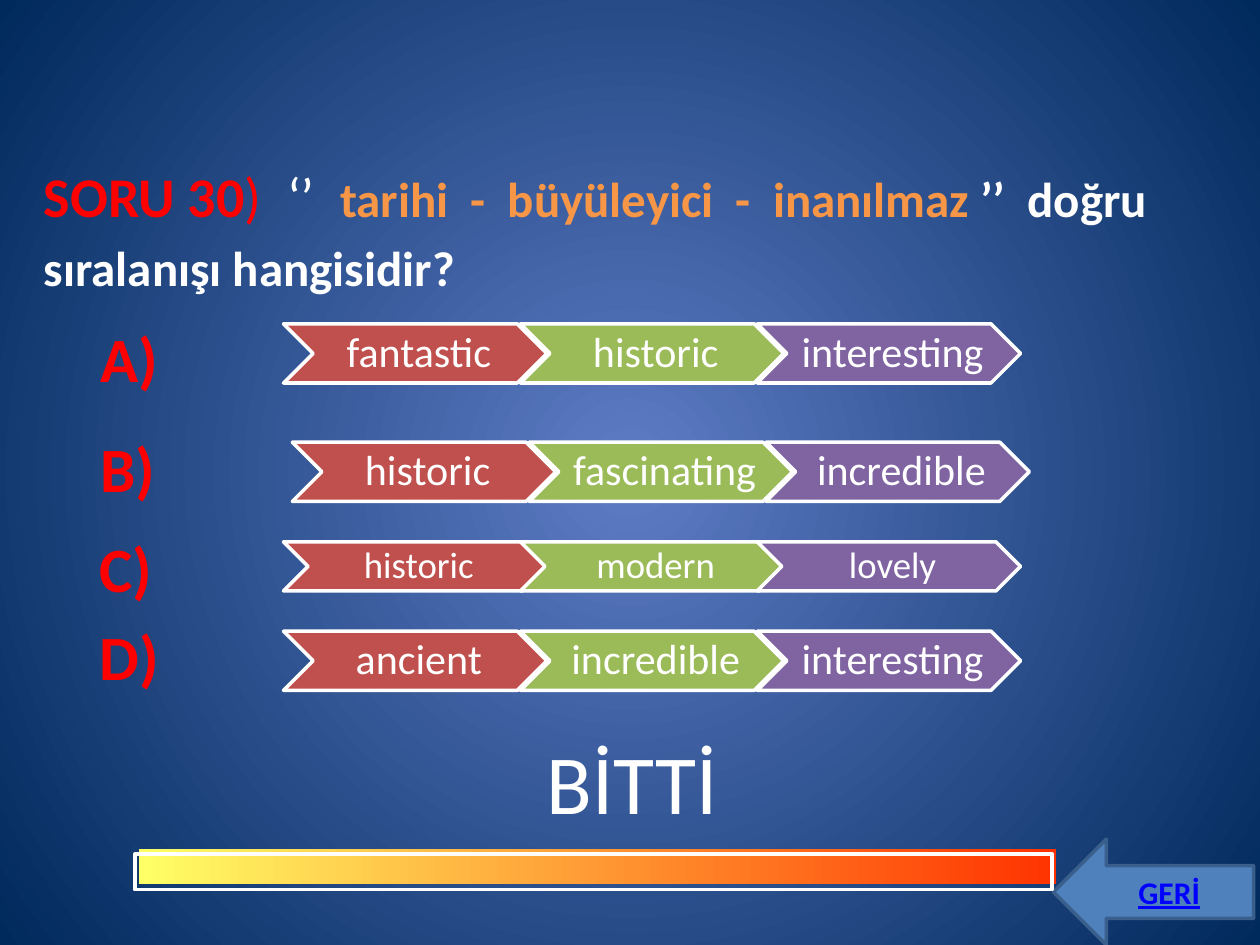
"""Build a quiz slide with four answer rows of chevrons."""
from lxml.etree import SubElement
from pptx import Presentation
from pptx.dml.color import RGBColor
from pptx.enum.shapes import MSO_SHAPE as SHAPE
from pptx.enum.text import MSO_ANCHOR as ANCHOR, PP_ALIGN as ALIGN
from pptx.oxml.ns import qn
from pptx.util import Inches, Pt

COLS, ROWS = 100, 75
UNIT = Inches(0.1)
FONT = "Calibri"
WHITE = RGBColor(0xFF, 0xFF, 0xFF)
RED = RGBColor(0xFF, 0x00, 0x00)
ORANGE = RGBColor(0xF7, 0x96, 0x46)
LINK_BLUE = RGBColor(0x00, 0x00, 0xFF)
ARROW_FILL = RGBColor(0x4F, 0x81, 0xBD)
ARROW_LINE = RGBColor(0x3A, 0x5F, 0x8C)
BG_CENTRE = RGBColor(0x5E, 0x7C, 0xC5)
BG_EDGE = RGBColor(0x00, 0x29, 0x5C)
BAR_START = RGBColor(0xFF, 0xFF, 0x66)
BAR_END = RGBColor(0xFF, 0x33, 0x00)
STEP_FILLS = (
    RGBColor(0xC0, 0x50, 0x4D),
    RGBColor(0x9B, 0xBB, 0x59),
    RGBColor(0x80, 0x64, 0xA2),
)
STEP_WIDTH, STEP_PITCH = 20.9, 18.8

ANSWERS = (
    ("A)", 7, 24.9, 22.5, 25.7, 4.7, 24, ("fantastic", "historic", "interesting")),
    ("B)", 7, 33.6, 23.2, 35.1, 4.7, 24, ("historic", "fascinating", "incredible")),
    ("C)", 6.9, 41.5, 22.5, 43, 3.9, 21, ("historic", "modern", "lovely")),
    ("D)", 6.9, 48.5, 22.5, 50.1, 4.7, 24, ("ancient", "incredible", "interesting")),
)


def grid(*cells):
    return [int(n * UNIT) for n in cells]


def add_run(p, text, size=24, color=WHITE, bold=False, underline=False):
    r = p.add_run()
    r.text = text
    r.font.name = FONT
    r.font.size = Pt(size)
    r.font.color.rgb = color
    r.font.bold = bold
    r.font.underline = underline


def add_text(shapes, box, text, align=ALIGN.LEFT, wrap=True, **fmt):
    tf = shapes.add_textbox(*grid(*box)).text_frame
    tf.word_wrap = wrap
    p = tf.paragraphs[0]
    p.alignment = align
    add_run(p, text, **fmt)


def set_gradient(fill, start, end):
    fill.gradient()
    for stop, color in zip(fill.gradient_stops, (start, end)):
        stop.color.rgb = color


def add_shape(shapes, kind, box, fill=None, line=None, width=2):
    sp = shapes.add_shape(kind, *grid(*box))
    sp.shadow.inherit = False
    if fill is None:
        sp.fill.background()
    else:
        sp.fill.solid()
        sp.fill.fore_color.rgb = fill
    if line is None:
        sp.line.fill.background()
    else:
        sp.line.color.rgb = line
        sp.line.width = Pt(width)
    return sp


def set_background(s):
    set_gradient(s.background.fill, BG_CENTRE, BG_EDGE)
    grad = s.element.find(".//" + qn("a:gradFill"))
    grad.remove(grad.find(qn("a:lin")))
    circle = SubElement(grad, qn("a:path"), {"path": "circle"})
    SubElement(circle, qn("a:fillToRect"), dict.fromkeys("ltrb", "50000"))


def add_question(s):
    tf = s.shapes.add_textbox(*grid(2.5, 11.5, 95.7, 12.6)).text_frame
    tf.word_wrap = True
    tf.vertical_anchor = ANCHOR.MIDDLE
    p = tf.paragraphs[0]
    p.line_spacing = 1.15
    p.space_before, p.space_after = Pt(6), Pt(10)
    add_run(p, "SORU 30", size=32, color=RED, bold=True)
    add_run(p, ")  ", size=32, color=RED)
    add_run(p, "‘’  ", size=32)
    add_run(p, "tarihi  -  büyüleyici  -  inanılmaz ", size=28, color=ORANGE, bold=True)
    add_run(p, "’’  doğru sıralanışı hangisidir?", size=28, bold=True)


def add_chevrons(s, left, top, height, size, words):
    shapes = s.shapes.add_group_shape().shapes
    for i, (word, fill) in enumerate(zip(words, STEP_FILLS)):
        box = (left + i * STEP_PITCH, top, STEP_WIDTH, height)
        tf = add_shape(shapes, SHAPE.CHEVRON, box, fill, WHITE).text_frame
        tf.word_wrap = True
        tf.vertical_anchor = ANCHOR.MIDDLE
        tf.margin_left = Inches(0.1)
        tf.margin_top = tf.margin_right = tf.margin_bottom = Inches(0.04)
        p = tf.paragraphs[0]
        p.alignment = ALIGN.CENTER
        p.line_spacing = 0.9
        add_run(p, word, size=size)


def add_footer(s):
    add_shape(s.shapes, SHAPE.LEFT_ARROW, (83.6, 66.6, 15.9, 8.4), ARROW_FILL, ARROW_LINE)
    add_text(s.shapes, (86.1, 68.8, 13.4, 4), "GERİ", align=ALIGN.CENTER,
             size=18, color=LINK_BLUE, bold=True, underline=True)
    bar = add_shape(s.shapes, SHAPE.RECTANGLE, (11, 67.4, 72.8, 2.8))
    set_gradient(bar.fill, BAR_START, BAR_END)
    bar.fill.gradient_angle = 0
    add_shape(s.shapes, SHAPE.RECTANGLE, (10.7, 67.8, 72.8, 2.8), line=WHITE, width=2.25)
    add_text(s.shapes, (42.4, 57.5, 15.7, 9.1), "BİTTİ", wrap=False, size=48)


def main():
    prs = Presentation()
    prs.slide_width, prs.slide_height = grid(COLS, ROWS)
    s = prs.slides.add_slide(prs.slide_layouts[6])
    set_background(s)
    add_question(s)
    add_footer(s)
    for label, x, y, left, top, height, size, words in ANSWERS:
        add_chevrons(s, left, top, height, size, words)
        add_text(s.shapes, (x, y, 10.2, 7.1), label, size=36, color=RED, bold=True)
    prs.save("out.pptx")


if __name__ == "__main__":
    main()
